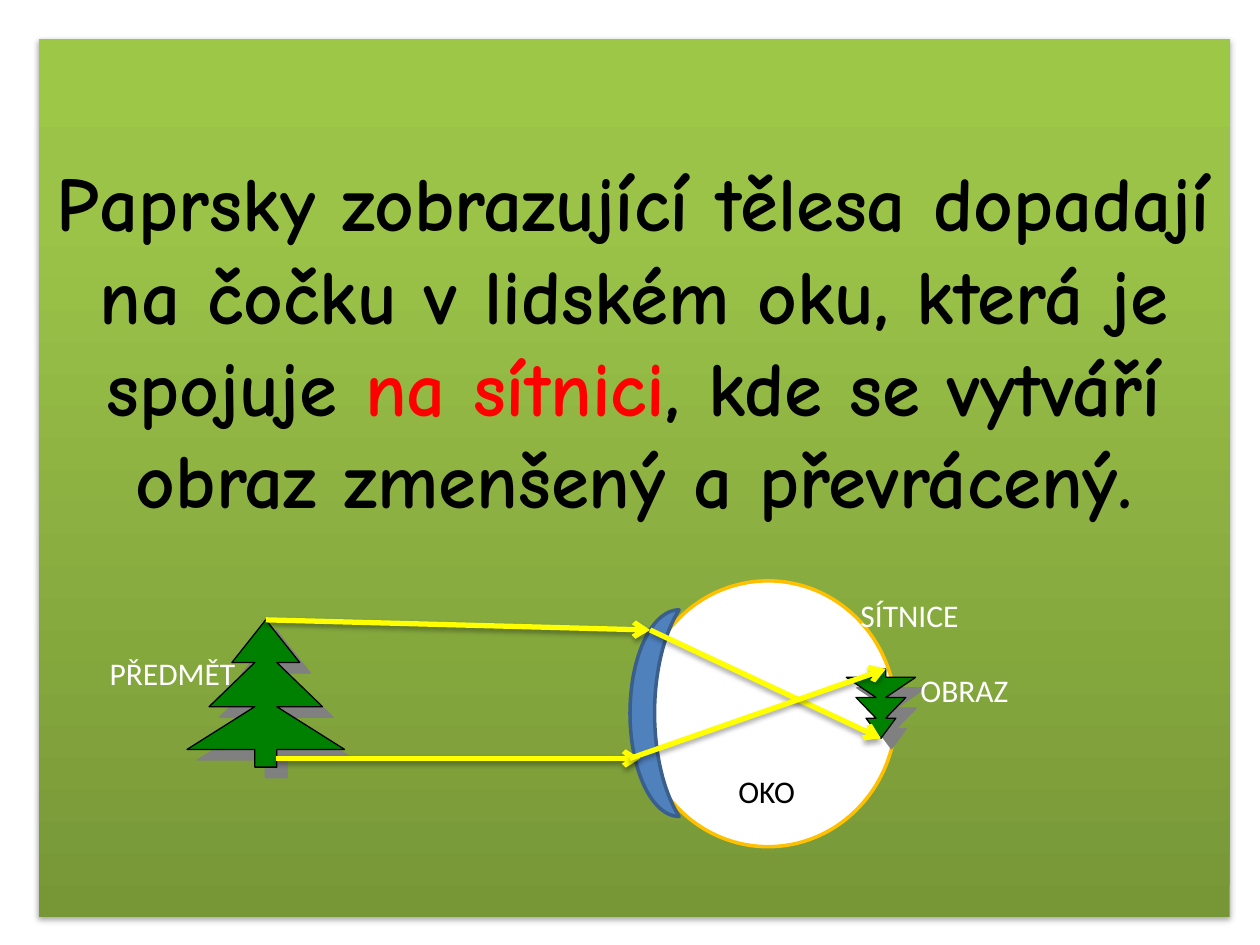
"""Build a slide showing how the eye forms a reduced, inverted image on the retina."""
from lxml import etree
from pptx import Presentation
from pptx import util as u
from pptx.dml.color import RGBColor
from pptx.enum import shapes, text
from pptx.oxml import parse_xml
from pptx.oxml.ns import nsdecls, qn

COLORS = {
    "black": "000000", "white": "FFFFFF", "red": "FF0000", "yellow": "FFFF00",
    "green": "008000", "gray": "808080", "orange": "FFC000",
    "lens": "4F81BD", "lens edge": "3A5F8C",
}
GRADIENT = [(0, "779737"), (80, "9BC348"), (100, "9DC746")]
SOFT_SHADOW = ("black", 35, 3.1, 1.8, 90)
HARD_SHADOW = ("gray", 100, 0, 8.5, 45)

TITLE_BOX = (22.3, 22.3, 680.4, 501.8)
TITLE_RUNS = [
    ("Paprsky zobrazující tělesa dopadají na čočku v lidském oku, která je spojuje ", "black"),
    ("na sítnici", "red"),
    (", kde se vytváří obraz zmenšený a převrácený.", "black"),
]
TITLE_BOTTOM_MARGIN = 162

EYE_PARTS = [
    (shapes.MSO_SHAPE.OVAL, (365.8, 331.9, 146.2, 151.9), "white", "orange"),
    (shapes.MSO_SHAPE.MOON, (360, 348.5, 28.1, 118.1), "lens", "lens edge"),
]
TREE_SIDE = [(0.43, 0.29), (0.14, 0.29), (0.72, 0.59), (0.14, 0.59),
             (1, 0.88), (0.14, 0.88), (0.14, 1)]
TREES = [
    {"tip": (151.9, 354.2), "width": 90, "height": 84.2},
    {"tip": (503.4, 421.9), "width": 39.6, "height": -39.6},
]
RAYS = [
    ((151.9, 354.2), (371.5, 360)),
    ((157.7, 433.4), (365.8, 433.4)),
    ((371.5, 360), (503.4, 421.9)),
    ((360, 433.4), (506.2, 382.3)),
]
LABELS = [
    ("OKO", (393.8, 416.2, 88.6, 72), "black"),
    ("SÍTNICE", (483.8, 315.4, 72, 72), "white"),
    ("PŘEDMĚT", (33.8, 348.5, 129.6, 72), "white"),
    ("OBRAZ", (511.9, 371.5, 78.5, 45.4), "white"),
]


def points(values):
    return [u.Pt(value) for value in values]


def rgb(name):
    return RGBColor.from_string(COLORS[name])


def paint(shape, fill, line, width):
    shape.fill.solid()
    shape.fill.fore_color.rgb = rgb(fill)
    shape.line.color.rgb = rgb(line)
    shape.line.width = u.Pt(width)


def add_shadow(shape, color, opacity, blur, distance, angle):
    shape._element.spPr.append(parse_xml(
        f'<a:effectLst {nsdecls("a")}><a:outerShdw blurRad="{u.Pt(blur)}" '
        f'dist="{u.Pt(distance)}" dir="{angle * 60000}" algn="ctr" rotWithShape="0">'
        f'<a:srgbClr val="{COLORS[color]}"><a:alpha val="{opacity * 1000}"/></a:srgbClr>'
        f'</a:outerShdw></a:effectLst>'))


def centre_text(shape):
    frame = shape.text_frame
    frame.word_wrap = True
    frame.vertical_anchor = text.MSO_ANCHOR.MIDDLE
    paragraph = frame.paragraphs[0]
    paragraph.alignment = text.PP_ALIGN.CENTER
    return paragraph


def add_title(slide):
    shape = slide.shapes.add_shape(shapes.MSO_SHAPE.RECTANGLE, *points(TITLE_BOX))
    shape.line.fill.background()
    shape.fill.gradient()
    shape.fill.gradient_angle = 90
    stops = shape._element.spPr.find(qn("a:gradFill")).find(qn("a:gsLst"))
    for stop in list(stops):
        stops.remove(stop)
    for position, color in GRADIENT:
        stop = etree.SubElement(stops, qn("a:gs"), pos=str(position * 1000))
        etree.SubElement(stop, qn("a:srgbClr"), val=color)
    add_shadow(shape, *SOFT_SHADOW)
    paragraph = centre_text(shape)
    shape.text_frame.margin_bottom = u.Pt(TITLE_BOTTOM_MARGIN)
    paragraph.font.name = "Comic Neue"
    paragraph.font.size = u.Pt(44)
    paragraph.font.bold = True
    for words, color in TITLE_RUNS:
        run = paragraph.add_run()
        run.text = words
        run.font.color.rgb = rgb(color)


def add_tree(slide, tip, width, height):
    left_side = [(-x, y) for x, y in reversed(TREE_SIDE)]
    outline = [(u.Pt(tip[0] + x * width / 2), u.Pt(tip[1] + y * height))
               for x, y in [(0, 0)] + TREE_SIDE + left_side]
    builder = slide.shapes.build_freeform(*outline[0])
    builder.add_line_segments(outline[1:], close=True)
    tree = builder.convert_to_shape()
    paint(tree, "green", "black", 0.75)
    add_shadow(tree, *HARD_SHADOW)


def add_ray(slide, start, end):
    ray = slide.shapes.add_connector(shapes.MSO_CONNECTOR.STRAIGHT, *points(start + end))
    ray.line.color.rgb = rgb("yellow")
    ray.line.width = u.Pt(3)
    etree.SubElement(ray.line._get_or_add_ln(), qn("a:tailEnd"), type="arrow")
    add_shadow(ray, *SOFT_SHADOW)


def add_label(slide, words, box, color):
    paragraph = centre_text(slide.shapes.add_textbox(*points(box)))
    paragraph.text = words
    paragraph.font.name = "Calibri"
    paragraph.font.size = u.Pt(18)
    paragraph.font.color.rgb = rgb(color)


def main():
    presentation = Presentation()
    presentation.slide_width, presentation.slide_height = points((720, 540))
    slide = presentation.slides.add_slide(presentation.slide_layouts[6])
    add_title(slide)
    for kind, box, fill, line in EYE_PARTS:
        part = slide.shapes.add_shape(kind, *points(box))
        part.shadow.inherit = False
        paint(part, fill, line, 2)
    for tree in TREES:
        add_tree(slide, **tree)
    for start, end in RAYS:
        add_ray(slide, start, end)
    for label in LABELS:
        add_label(slide, *label)
    presentation.save("out.pptx")


if __name__ == "__main__":
    main()
